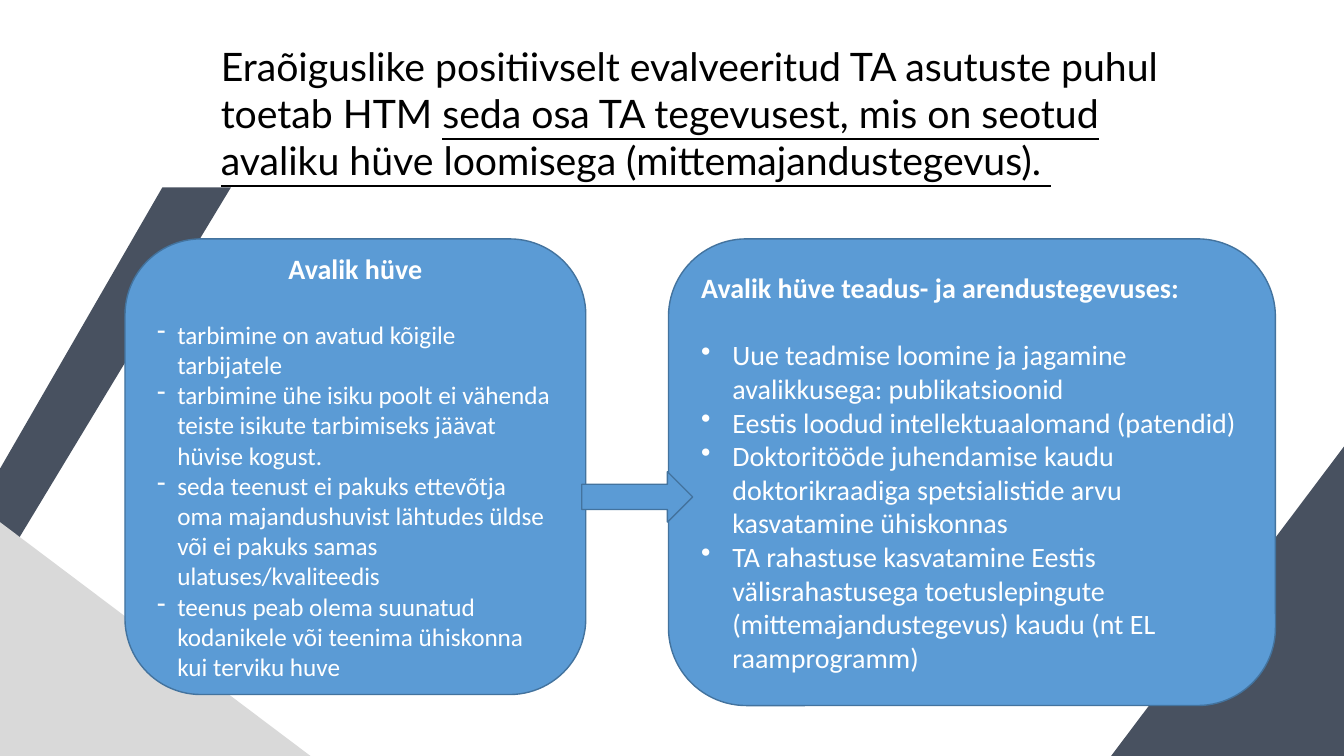
from dataclasses import dataclass

from lxml import etree
from pptx import Presentation
from pptx.dml.color import RGBColor
from pptx.enum.shapes import MSO_SHAPE
from pptx.enum.text import MSO_ANCHOR, MSO_AUTO_SIZE, PP_ALIGN
from pptx.oxml.ns import qn
from pptx.util import Inches, Pt

ROUNDED, ARROW = MSO_SHAPE.ROUNDED_RECTANGLE, MSO_SHAPE.RIGHT_ARROW
LEFT, CENTER = PP_ALIGN.LEFT, PP_ALIGN.CENTER
TOP, MIDDLE = MSO_ANCHOR.TOP, MSO_ANCHOR.MIDDLE
NO_AUTOFIT = MSO_AUTO_SIZE.NONE
TITLE_ONLY = 5

SLATE, GREY = "485160", "D9D9D9"
BLUE, BLUE_EDGE = "5B9BD5", "43739E"
WHITE, BLACK = "FFFFFF", "000000"
HEADING_SIZE = 20


@dataclass
class Band:
    points: list[tuple[float, float]]
    color: str


@dataclass
class Panel:
    box: tuple[float, float, float, float]
    heading: str
    heading_align: PP_ALIGN
    bullet: str
    indent: float
    size: int
    items: list[str]


BANDS = [
    Band([(13.33, 4.43), (11.02, 7.5), (13.33, 7.5)], SLATE),
    Band([(0, 4.65), (1.61, 1.86), (2.29, 1.86), (0, 5.65)], SLATE),
    Band([(0, 5.18), (0, 7.5), (3.08, 7.5)], GREY),
]

PANELS = [
    Panel((1.24, 2.37, 4.57, 4.52), "Avalik hüve", CENTER, "-", 0.2, 18, [
        "tarbimine on avatud kõigile tarbijatele",
        "tarbimine ühe isiku poolt ei vähenda teiste isikute tarbimiseks "
        "jäävat hüvise kogust.",
        "seda teenust ei pakuks ettevõtja oma majandushuvist lähtudes üldse "
        "või ei pakuks samas ulatuses/kvaliteedis",
        "teenus peab olema suunatud kodanikele või teenima ühiskonna kui "
        "terviku huve",
    ]),
    Panel((6.63, 2.37, 6.02, 4.63), "Avalik hüve teadus- ja arendustegevuses:",
          LEFT, "•", 0.31, 20, [
        "Uue teadmise loomine ja jagamine avalikkusega: publikatsioonid",
        "Eestis loodud intellektuaalomand (patendid)",
        "Doktoritööde juhendamise kaudu doktorikraadiga spetsialistide arvu "
        "kasvatamine ühiskonnas",
        "TA rahastuse kasvatamine Eestis välisrahastusega toetuslepingute "
        "(mittemajandustegevus) kaudu (nt EL raamprogramm)",
    ]),
]


def rgb(color: str) -> RGBColor:
    return RGBColor.from_string(color)


def set_font(font, name: str, size: int, color: str, bold: bool = False) -> None:
    font.name, font.size, font.bold = name, Pt(size), bold
    font.color.rgb = rgb(color)


def set_bullet(paragraph, bullet: str, indent: float) -> None:
    properties = paragraph._p.get_or_add_pPr()
    properties.set("marL", str(Inches(indent)))
    properties.set("indent", str(-Inches(indent)))
    etree.SubElement(properties, qn("a:buChar")).set("char", bullet)


def draw_band(slide, band: Band) -> None:
    start, *rest = [(Inches(x), Inches(y)) for x, y in band.points]
    builder = slide.shapes.build_freeform(*start)
    builder.add_line_segments(rest, close=True)
    shape = builder.convert_to_shape()
    shape.shadow.inherit = False
    shape.fill.solid()
    shape.fill.fore_color.rgb = rgb(band.color)
    shape.line.fill.background()


def add_blue_shape(slide, kind: MSO_SHAPE, box: tuple[float, float, float, float]):
    shape = slide.shapes.add_shape(kind, *map(Inches, box))
    shape.shadow.inherit = False
    shape.fill.solid()
    shape.fill.fore_color.rgb = rgb(BLUE)
    shape.line.color.rgb = rgb(BLUE_EDGE)
    shape.line.width = Pt(1)
    return shape


def draw_panel(slide, panel: Panel) -> None:
    frame = add_blue_shape(slide, ROUNDED, panel.box).text_frame
    frame.word_wrap = True
    frame.vertical_anchor = MIDDLE

    heading = frame.paragraphs[0]
    heading.text = panel.heading
    heading.alignment = panel.heading_align
    heading.space_after = Pt(24)
    set_font(heading.font, "Calibri", HEADING_SIZE, WHITE, bold=True)

    for item in panel.items:
        entry = frame.add_paragraph()
        entry.text = item
        entry.alignment = LEFT
        set_bullet(entry, panel.bullet, panel.indent)
        set_font(entry.font, "Calibri", panel.size, WHITE)


def write_title(slide) -> None:
    title = slide.shapes.title
    title.left, title.top, title.width, title.height = map(
        Inches, (2.09, 0.37, 9.73, 1.51))
    frame = title.text_frame
    frame.word_wrap = True
    frame.auto_size = NO_AUTOFIT
    frame.vertical_anchor = TOP
    statement = frame.paragraphs[0]
    statement.alignment = LEFT
    set_font(statement.font, "Lato", 28, BLACK)
    statement.add_run().text = (
        "Eraõiguslike positiivselt evalveeritud TA asutuste puhul toetab HTM ")
    supported_part = statement.add_run()
    supported_part.text = ("seda osa TA tegevusest, mis on seotud avaliku hüve "
                           "loomisega (mittemajandustegevus). ")
    supported_part.font.underline = True


def main() -> None:
    deck = Presentation()
    deck.slide_width, deck.slide_height = Inches(13.33), Inches(7.5)
    slide = deck.slides.add_slide(deck.slide_layouts[TITLE_ONLY])

    # Title
    write_title(slide)

    # Background bands
    for band in BANDS:
        draw_band(slide, band)

    # Panels and the arrow between them
    for panel in PANELS:
        draw_panel(slide, panel)
    add_blue_shape(slide, ARROW, (5.77, 4.68, 1.1, 0.5))

    deck.save("out.pptx")


if __name__ == "__main__":
    main()
